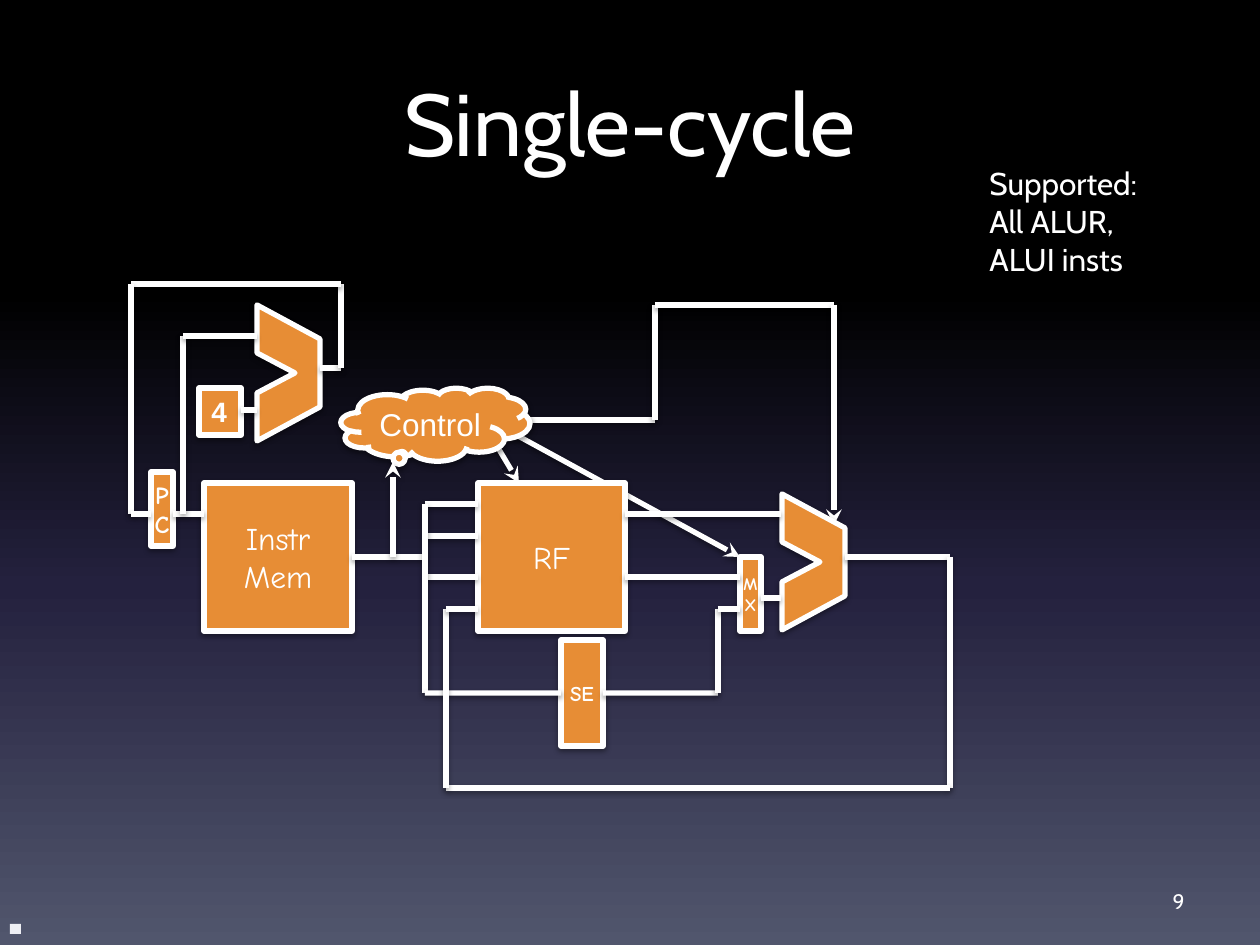
import pptx
import pptx.dml.color
import pptx.enum.shapes
import pptx.enum.text
import pptx.oxml
import pptx.oxml.ns
import pptx.util

RGBColor = pptx.dml.color.RGBColor
Shapes = pptx.enum.shapes.MSO_SHAPE
Align = pptx.enum.text.PP_ALIGN
Anchor = pptx.enum.text.MSO_ANCHOR
qn = pptx.oxml.ns.qn

WHITE = RGBColor(0xFF, 0xFF, 0xFF)
ORANGE = RGBColor(0xE7, 0x8D, 0x35)
PALE = RGBColor(0xEE, 0xEF, 0xF4)
BLACK = RGBColor(0x00, 0x00, 0x00)
NAVY = RGBColor(0x24, 0x21, 0x3E)
SLATE = RGBColor(0x51, 0x56, 0x6D)
BACKGROUND_STOPS = [(0, BLACK), (31, BLACK), (62, NAVY), (100, SLATE)]

EMU_PER_PX = 914400 / 126
LEFT, RIGHT = 1, 3  # connection sites of a rectangle
NAMESPACE = pptx.oxml.ns.nsdecls("a")


def px(length):
    return pptx.util.Emu(round(length * EMU_PER_PX))


def paint_background(slide):
    fill = slide.background.fill
    fill.gradient()
    fill.gradient_angle = 270
    stop_list = next(slide.element.iter(qn("a:gsLst")))
    for stop in list(stop_list):
        stop_list.remove(stop)
    for percent, color in BACKGROUND_STOPS:
        stop_list.append(pptx.oxml.parse_xml(
            f'<a:gs {NAMESPACE} pos="{percent * 1000}"><a:srgbClr val="{color}"/></a:gs>'))


def shadow_effect():
    return pptx.oxml.parse_xml(
        f'<a:effectLst {NAMESPACE}>'
        '<a:outerShdw blurRad="39370" dist="20320" dir="5400000" rotWithShape="0">'
        '<a:srgbClr val="000000"><a:alpha val="38000"/></a:srgbClr>'
        '</a:outerShdw></a:effectLst>')


def style_line(line):
    line.color.rgb = WHITE
    line.width = pptx.util.Pt(3)


def style_block(shape):
    """Give a diagram part its orange fill, white outline and soft shadow."""
    shape.fill.solid()
    shape.fill.fore_color.rgb = ORANGE
    style_line(shape.line)
    shape.shadow.inherit = False
    properties = shape.element.spPr
    properties.replace(properties.find(qn("a:effectLst")), shadow_effect())


def write_text(shape, text, font, size, align=Align.LEFT, anchor=Anchor.TOP,
               bold=False, wrap=False):
    frame = shape.text_frame
    frame.text = text
    frame.word_wrap = wrap
    frame.vertical_anchor = anchor
    for paragraph in frame.paragraphs:
        paragraph.alignment = align
        for run in paragraph.runs:
            run.font.name = font
            run.font.size = pptx.util.Pt(size)
            run.font.bold = bold
            run.font.color.rgb = WHITE


def add_label(slide, box, text, size, **options):
    label = slide.shapes.add_textbox(*map(px, box))
    write_text(label, text, "Cabin", size, **options)


def add_block(slide, box, text, size, bold=False):
    block = slide.shapes.add_shape(Shapes.RECTANGLE, *map(px, box))
    style_block(block)
    write_text(block, text, "Comic Neue", size, Align.CENTER, Anchor.MIDDLE, bold)
    return block


def add_adder(slide, left, top):
    """Draw the notched outline of an adder or ALU."""
    outline = [(63, 34), (63, 102), (0, 136), (0, 88), (38, 68), (0, 48)]
    builder = slide.shapes.build_freeform(left, top, scale=EMU_PER_PX)
    builder.add_line_segments([(left + x, top + y) for x, y in outline], close=True)
    style_block(builder.convert_to_shape())


def add_constant(slide):
    constant = slide.shapes.add_shape(Shapes.RECTANGLE, *map(px, (199, 388, 42, 47)))
    style_block(constant)
    write_text(constant, "4", "Arial", 16, bold=True)


def add_control(slide):
    cloud = slide.shapes.add_shape(Shapes.CLOUD_CALLOUT, *map(px, (341, 388, 189, 73)))
    cloud.adjustments[0] = -0.177
    cloud.adjustments[1] = 0.426
    style_block(cloud)
    write_text(cloud, "Control", "Arial", 18)


def add_wire(slide, *points, arrow=False):
    """Join the points with straight connectors and return them in order."""
    connectors = []
    for start, end in zip(points, points[1:]):
        connector = slide.shapes.add_connector(
            pptx.enum.shapes.MSO_CONNECTOR.STRAIGHT, *map(px, start + end))
        style_line(connector.line)
        connector.element.spPr.append(shadow_effect())
        connectors.append(connector)
    if arrow:
        line = connectors[-1].element.spPr.find(qn("a:ln"))
        line.append(pptx.oxml.parse_xml(f'<a:tailEnd {NAMESPACE} type="stealth"/>'))
    return connectors


def add_control_signals(slide):
    add_wire(slide, (498, 420), (655, 420), (655, 305), (834, 305), (834, 525), arrow=True)
    add_wire(slide, (509, 431), (740, 557), arrow=True)
    add_wire(slide, (488, 431), (519, 483), arrow=True)


def add_datapath_wires(slide, instruction_memory, sign_extend):
    # Program counter and its increment
    add_wire(slide, (173, 514), (204, 514))
    add_wire(slide, (183, 514), (183, 336), (257, 336))
    add_wire(slide, (241, 410), (257, 410))
    add_wire(slide, (320, 368), (341, 368), (341, 284), (131, 284), (131, 514), (151, 514))

    # Instruction fields
    fetch = add_wire(slide, (352, 557), (425, 557))
    fetch[0].begin_connect(instruction_memory, RIGHT)
    add_wire(slide, (393, 557), (393, 462), arrow=True)
    for y in (504, 536, 577):
        add_wire(slide, (425, y), (478, y))

    # Immediate operand through sign extension
    immediate = add_wire(slide, (425, 504), (425, 693), (561, 693))
    immediate[-1].end_connect(sign_extend, LEFT)
    extended = add_wire(slide, (603, 693), (718, 693), (718, 609), (740, 609))
    extended[0].begin_connect(sign_extend, RIGHT)

    # Register operands, ALU and write-back
    add_wire(slide, (625, 514), (781, 514))
    add_wire(slide, (625, 577), (740, 577))
    add_wire(slide, (761, 598), (781, 598))
    add_wire(slide, (845, 557), (950, 557), (950, 788), (446, 788), (446, 609), (478, 609))


def add_corner_mark(slide):
    mark = slide.shapes.add_shape(Shapes.RECTANGLE, *map(px, (10, 924, 11, 10)))
    mark.fill.solid()
    mark.fill.fore_color.rgb = PALE
    mark.line.fill.background()
    mark.shadow.inherit = False


def main():
    presentation = pptx.Presentation()
    presentation.slide_width = px(1260)
    presentation.slide_height = px(945)
    slide = presentation.slides.add_slide(presentation.slide_layouts[6])
    paint_background(slide)

    add_control_signals(slide)
    add_label(slide, (63, 63, 1134, 158), "Single-cycle", 50, align=Align.CENTER, wrap=True)
    add_label(slide, (903, 876, 294, 50), "9", 12, align=Align.RIGHT,
              anchor=Anchor.MIDDLE, wrap=True)
    add_label(slide, (977, 158, 181, 127), "Supported:\nAll ALUR,\vALUI insts", 18)

    instruction_memory = add_block(slide, (204, 483, 148, 148), "Instr\nMem", 18)
    add_block(slide, (151, 472, 22, 74), "P\nC", 14, bold=True)
    add_block(slide, (478, 483, 147, 148), "RF", 18)
    sign_extend = add_block(slide, (561, 640, 42, 106), "SE", 12, bold=True)
    add_block(slide, (740, 557, 21, 74), "M\nX", 10, bold=True)
    add_adder(slide, 257, 305)
    add_adder(slide, 782, 494)
    add_constant(slide)
    add_control(slide)
    add_datapath_wires(slide, instruction_memory, sign_extend)
    add_corner_mark(slide)

    presentation.save("out.pptx")


if __name__ == "__main__":
    main()
